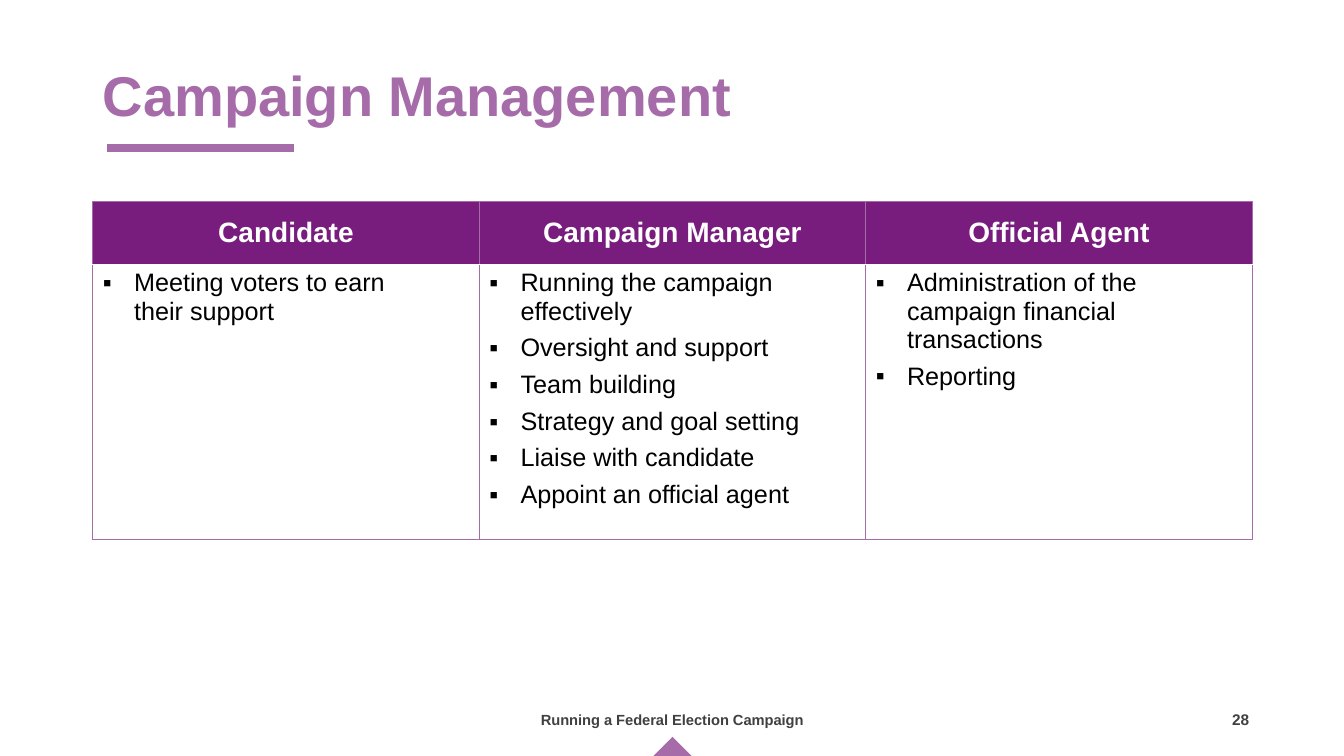
"""Builds the Campaign Management slide: three roles and their duties in a table."""
from dataclasses import dataclass

from lxml.etree import SubElement
from pptx import Presentation
from pptx.dml.color import RGBColor
from pptx.enum.shapes import MSO_CONNECTOR, MSO_SHAPE
from pptx.enum.text import MSO_ANCHOR, MSO_AUTO_SIZE, PP_ALIGN
from pptx.oxml.ns import qn
from pptx.util import Emu, Pt

TITLE = "Campaign Management"
FOOTER = "Running a Federal Election Campaign"
PAGE = "28"
ROLES = {
    "Candidate": ["Meeting voters to earn \ntheir support"],
    "Campaign Manager": [
        "Running the campaign effectively",
        "Oversight and support",
        "Team building",
        "Strategy and goal setting",
        "Liaise with candidate",
        "Appoint an official agent",
    ],
    "Official Agent": [
        "Administration of the campaign financial transactions",
        "Reporting",
    ],
}


@dataclass(frozen=True)
class Theme:
    font: str = "Arial"
    purple: str = "781D7D"
    lilac: str = "A66BA9"
    white: str = "FFFFFF"
    black: str = "000000"
    grey: str = "404040"
    title: float = 40
    heading: float = 20
    duty: float = 18
    page: float = 11
    footer: float = 10.5


THEME = Theme()
PX_PER_INCH = 100
SLIDE = (1333, 750)
TITLE_BOX = (92, 40, 1150, 115)
UNDERLINE = (106, 147, 292, 147)
TABLE_BOX = (92, 200, 1150, 335)
ROW_HEIGHTS = (62, 273)
FOOTER_BOX = (442, 694, 450, 40)
PAGE_BOX = (1185, 700, 91, 29)
MARKER_BOX = (647, 731, 40, 20)
BULLET_INDENT = 31


def px(*lengths):
    return [Emu(length * 914400 // PX_PER_INCH) for length in lengths]


def rgb(color):
    return RGBColor.from_string(color)


def write(paragraph, text, size, color, bold=True, align=PP_ALIGN.LEFT):
    paragraph.alignment = align
    for index, line in enumerate(text.split("\n")):
        if index:
            paragraph.add_line_break()
        run = paragraph.add_run()
        run.text = line
        run.font.name = THEME.font
        run.font.size = Pt(size)
        run.font.bold = bold
        run.font.color.rgb = rgb(color)


def add_bullet(paragraph):
    indent, = px(BULLET_INDENT)
    properties = paragraph._p.get_or_add_pPr()
    properties.set("marL", str(indent))
    properties.set("indent", str(-indent))
    SubElement(properties, qn("a:buFont"), typeface=THEME.font)
    SubElement(properties, qn("a:buChar"), char="▪")


def add_borders(cell, **edges):
    properties = cell._tc.get_or_add_tcPr()
    for side in "LRTB":
        color, width = edges.get(side, (THEME.lilac, 1))
        line = SubElement(properties, qn(f"a:ln{side}"), w=str(Pt(width)))
        fill = SubElement(line, qn("a:solidFill"))
        SubElement(fill, qn("a:srgbClr"), val=color)


def add_title(slide):
    title = slide.shapes.title
    title.left, title.top, title.width, title.height = px(*TITLE_BOX)
    frame = title.text_frame
    frame.auto_size = MSO_AUTO_SIZE.NONE
    frame.vertical_anchor = MSO_ANCHOR.MIDDLE
    frame.paragraphs[0].line_spacing = 0.9
    write(frame.paragraphs[0], TITLE, THEME.title, THEME.lilac)

    underline = slide.shapes.add_connector(MSO_CONNECTOR.STRAIGHT, *px(*UNDERLINE))
    underline.line.color.rgb = rgb(THEME.lilac)
    underline.line.width = Pt(6)
    SubElement(underline._element.spPr, qn("a:effectLst"))


def add_roles(slide):
    table = slide.shapes.add_table(2, len(ROLES), *px(*TABLE_BOX)).table
    table.horz_banding = False
    for row, height in zip(table.rows, px(*ROW_HEIGHTS)):
        row.height = height
    divider = (THEME.white, 0.5)
    for column, (role, duties) in enumerate(ROLES.items()):
        heading, body = table.cell(0, column), table.cell(1, column)
        add_borders(heading, B=divider)
        heading.fill.solid()
        heading.fill.fore_color.rgb = rgb(THEME.purple)
        heading.vertical_anchor = MSO_ANCHOR.MIDDLE
        write(heading.text_frame.paragraphs[0], role, THEME.heading, THEME.white,
              align=PP_ALIGN.CENTER)

        add_borders(body, T=divider)
        body.fill.background()
        frame = body.text_frame
        for index, duty in enumerate(duties):
            paragraph = frame.add_paragraph() if index else frame.paragraphs[0]
            paragraph.space_after = Pt(6)
            add_bullet(paragraph)
            write(paragraph, duty, THEME.duty, THEME.black, bold=False)


def add_footer(slide):
    for text, box, size, anchor in (
        (FOOTER, FOOTER_BOX, THEME.footer, MSO_ANCHOR.MIDDLE),
        (PAGE, PAGE_BOX, THEME.page, MSO_ANCHOR.TOP),
    ):
        frame = slide.shapes.add_textbox(*px(*box)).text_frame
        frame.word_wrap = True
        frame.vertical_anchor = anchor
        write(frame.paragraphs[0], text, size, THEME.grey, align=PP_ALIGN.CENTER)

    marker = slide.shapes.add_shape(MSO_SHAPE.ISOSCELES_TRIANGLE, *px(*MARKER_BOX))
    marker.shadow.inherit = False
    marker.fill.solid()
    marker.fill.fore_color.rgb = rgb(THEME.lilac)
    marker.line.fill.background()


def main():
    deck = Presentation()
    deck.slide_width, deck.slide_height = px(*SLIDE)
    slide = deck.slides.add_slide(deck.slide_layouts[5])
    add_title(slide)
    add_roles(slide)
    add_footer(slide)
    deck.save("out.pptx")


if __name__ == "__main__":
    main()
